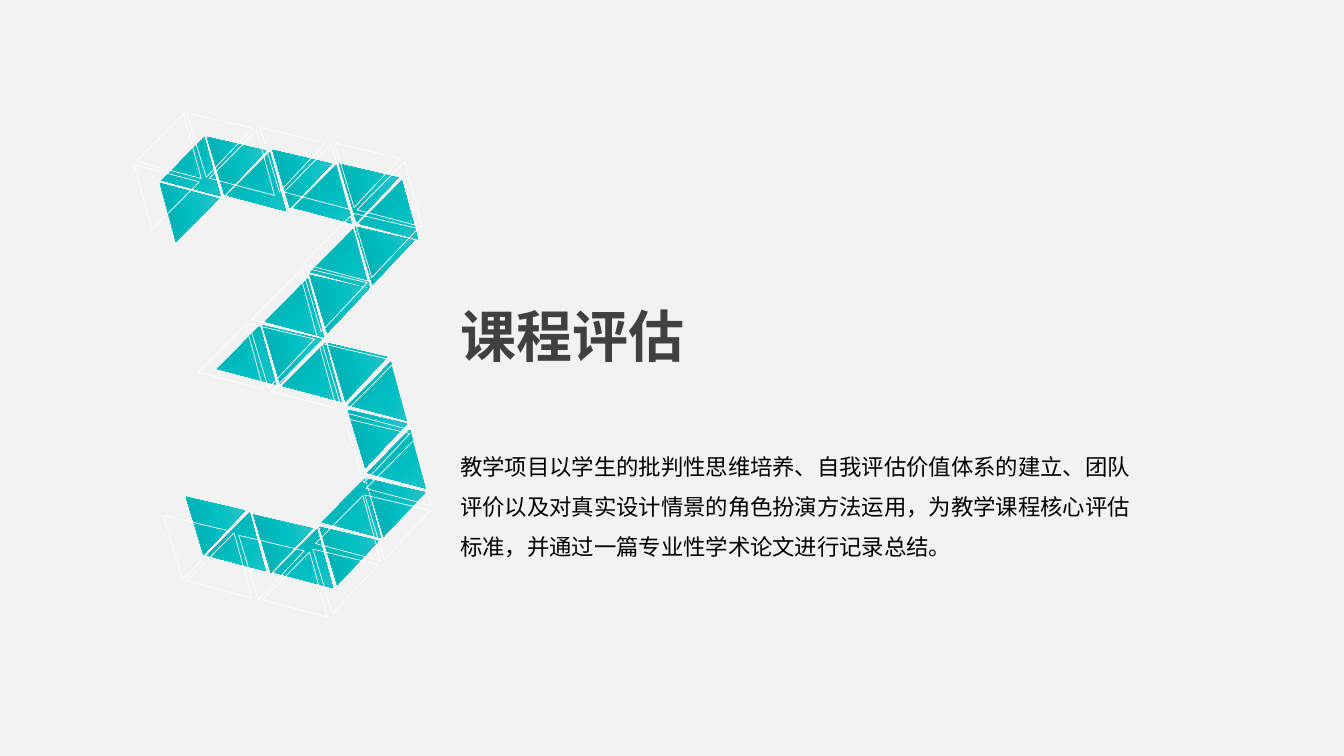
from copy import deepcopy

from pptx import Presentation
from pptx.dml.color import RGBColor
from pptx.enum.shapes import MSO_SHAPE
from pptx.enum.text import MSO_ANCHOR
from pptx.oxml.ns import qn
from pptx.util import Cm, Pt

COLORS = {
    "background": "F2F2F2",
    "title": "404040",
    "body": "000000",
    "light": "4BC7CB",
    "teal": "00BFC3",
    "dark": "00AAAD",
    "outline": "FFFFFF",
}
STEEP, FLAT, FIRST = 73.2, 134.8, 74.8
TRIANGLES = [
    (4.11, 4.52, FIRST), (4.32, 3.81, FLAT), (5.97, 4.19, FLAT),
    (5.31, 3.33, STEEP), (6.96, 3.66, STEEP), (7.65, 4.5, FLAT),
    (8.64, 4.01, STEEP), (9.04, 5.59, STEEP), (8.08, 6.12, FLAT),
    (7.9, 6.81, STEEP), (6.93, 7.37, FLAT), (9.3, 4.9, FLAT),
    (7.37, 8.99, FLAT), (6.71, 8.08, STEEP), (5.72, 8.56, FLAT),
    (9.5, 11.18, FLAT), (8.36, 8.53, STEEP), (9.02, 9.47, FLAT),
    (8.86, 10.21, STEEP), (8.36, 12.42, FLAT), (9.32, 11.94, STEEP),
    (8.15, 13.16, STEEP), (6.48, 12.85, STEEP), (7.16, 13.69, FLAT),
    (5.46, 13.26, FLAT), (4.78, 12.4, STEEP),
]
PIVOT_LEFT, PIVOT_TOP = 7.37, 8.99
LAYERS = [
    {"left": 7.37, "top": 8.99, "width": 1.52, "height": 1.32,
     "line": "teal", "stops": ["light", "teal", "dark"]},
    {"left": 7.11, "top": 9.04, "width": 1.7, "height": 1.47,
     "line": "outline", "stops": []},
]
TEXTS = [
    {"text": "课程评估",
     "place": (11.35, 7.7, 11.05, 1.73),
     "color": "title",
     "frame": {"word_wrap": True, "vertical_anchor": MSO_ANCHOR.MIDDLE},
     "para": {"line_spacing": 0.9, "space_before": Pt(10)},
     "font": {"name": "League Spartan", "size": Pt(40), "bold": True}},
    {"text": "教学项目以学生的批判性思维培养、自我评估价值体系的建立、团队评价以及对真实设计情景的角色扮演方法运用，为教学课程核心评估标准，并通过一篇专业性学术论文进行记录总结。",
     "place": (11.35, 10.95, 17.73, 3.33),
     "color": "body",
     "frame": {"word_wrap": True, "vertical_anchor": MSO_ANCHOR.TOP},
     "para": {"line_spacing": 1.5},
     "font": {"name": "League Spartan", "size": Pt(16), "bold": False}},
]


def color(name):
    return RGBColor.from_string(COLORS[name])


def set_format(target, values):
    for name, value in values.items():
        setattr(target, name, value)


deck = Presentation()
deck.slide_width, deck.slide_height = Cm(33.87), Cm(19.05)
page = deck.slides.add_slide(deck.slide_layouts[6])
page.background.fill.solid()
page.background.fill.fore_color.rgb = color("background")

for entry in TEXTS:
    box = page.shapes.add_textbox(*[Cm(length) for length in entry["place"]])
    set_format(box.text_frame, entry["frame"])
    para = box.text_frame.paragraphs[0]
    set_format(para, entry["para"])
    span = para.add_run()
    span.text = entry["text"]
    set_format(span.font, entry["font"])
    span.font.color.rgb = color(entry["color"])

for layer in LAYERS:
    scale = layer["width"] / LAYERS[0]["width"]
    numeral = page.shapes.add_group_shape()
    for left, top, rotation in TRIANGLES:
        triangle = numeral.shapes.add_shape(
            MSO_SHAPE.ISOSCELES_TRIANGLE,
            Cm(layer["left"] + (left - PIVOT_LEFT) * scale),
            Cm(layer["top"] + (top - PIVOT_TOP) * scale),
            Cm(layer["width"]),
            Cm(layer["height"]),
        )
        triangle.rotation = rotation
        triangle.shadow.inherit = False
        triangle.line.color.rgb = color(layer["line"])
        triangle.line.width = Pt(0.5)
        if not layer["stops"]:
            triangle.fill.background()
            continue
        triangle.fill.gradient()
        triangle.fill.gradient_angle = 270
        stop_list = triangle._element.spPr.find(".//" + qn("a:gsLst"))
        stop_list.insert(1, deepcopy(stop_list[0]))
        for index, name in enumerate(layer["stops"]):
            stop = triangle.fill.gradient_stops[index]
            set_format(stop, {"position": index / 2})
            stop.color.rgb = color(name)

deck.save("out.pptx")
